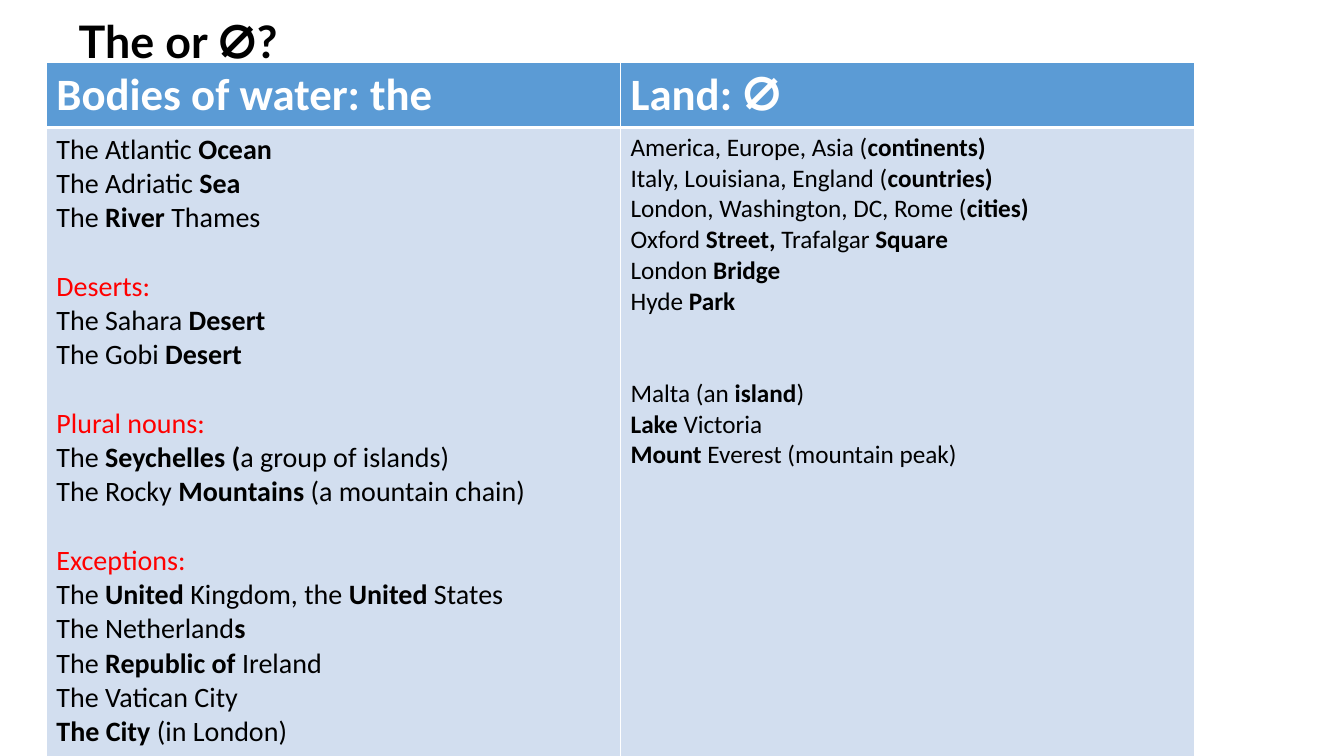
from pptx import Presentation
from pptx.dml.color import RGBColor
from pptx.enum import text as t
from pptx.oxml import parse_xml
from pptx.oxml.ns import nsdecls
from pptx.util import Inches, Pt

BLACK = RGBColor(0, 0, 0)
WHITE = RGBColor(255, 255, 255)
RED = RGBColor(255, 0, 0)
HEADER_BLUE = RGBColor(0x5B, 0x9B, 0xD5)
PALE_BLUE = RGBColor(0xD2, 0xDE, 0xEF)

# Text between asterisks is bold.
TITLE = "The or ⵁ?"
HEADERS = ["Bodies of water: the", "Land: *ⵁ*"]
WATER = [
    ("", ["The Atlantic *Ocean*", "The Adriatic *Sea*", "The *River* Thames"]),
    ("Deserts:", ["The Sahara *Desert*", "The Gobi *Desert*"]),
    ("Plural nouns:", ["The *Seychelles (*a group of islands)",
                       "The Rocky *Mountains* (a mountain chain)"]),
    ("Exceptions:", ["The *United* Kingdom, the *United* States",
                     "The Netherland*s*", "The *Republic of *Ireland",
                     "The Vatican City", "*The City *(in London)"]),
]
LAND = [
    ("", ["America, Europe, Asia (*continents)*",
          "Italy, Louisiana, England (*countries)*",
          "London, Washington, DC, Rome (*cities)*",
          "Oxford *Street, *Trafalgar* Square*",
          "London *Bridge*", "Hyde *Park*"]),
    ("", ["Malta (an* island*)", "*Lake* Victoria",
          "*Mount* Everest (mountain peak)"]),
]
# groups, text size, lines of space between groups
COLUMNS = [(WATER, 20, 1), (LAND, 18, 2)]
LINE_HEIGHT = 1.22
ROW_HEIGHTS = [0.64, 6.43]


def write(para, text, size=20, color=BLACK, bold=False, font="Calibri", marked_font=None):
    for index, part in enumerate(text.split("*")):
        if not part:
            continue
        marked = index % 2 == 1
        span = para.add_run()
        span.text = part
        span.font.size = Pt(size)
        span.font.bold = bold or marked
        span.font.name = marked_font if marked and marked_font else font
        span.font.color.rgb = color


def write_groups(frame, groups, size, gap_lines):
    para = frame.paragraphs[0]
    for number, (heading, lines) in enumerate(groups):
        entries = [(heading, RED)] if heading else []
        entries += [(line, BLACK) for line in lines]
        for position, (line, color) in enumerate(entries):
            if number or position:
                para = frame.add_paragraph()
            if number and position == 0:
                para.space_before = Pt(round(gap_lines * size * LINE_HEIGHT, 1))
            write(para, line, size=size, color=color)


def style_cell(cell, fill, top, bottom):
    """Fill the cell and give it white borders, widths in points."""
    cell.fill.solid()
    cell.fill.fore_color.rgb = fill
    sides = [("lnL", 1), ("lnR", 1), ("lnT", top), ("lnB", bottom)]
    for index, (side, width) in enumerate(sides):
        cell._tc.get_or_add_tcPr().insert(index, parse_xml(
            f'<a:{side} {nsdecls("a")} w="{Pt(width)}"><a:solidFill>'
            f'<a:srgbClr val="{WHITE}"/></a:solidFill></a:{side}>'))


deck = Presentation()
deck.slide_width, deck.slide_height = Inches(13.33), Inches(7.5)
slide = deck.slides.add_slide(deck.slide_layouts[5])

title = slide.shapes.title
title.left, title.top = Inches(0.68), Inches(0.12)
title.width, title.height = Inches(11.5), Inches(0.63)
title.text_frame.auto_size = t.MSO_AUTO_SIZE.NONE
title.text_frame.vertical_anchor = t.MSO_ANCHOR.MIDDLE
heading_para = title.text_frame.paragraphs[0]
heading_para.alignment = t.PP_ALIGN.LEFT
heading_para.line_spacing = 0.9
write(heading_para, TITLE, size=32, bold=True, font="Lato")

table = slide.shapes.add_table(2, 2, Inches(0.46), Inches(0.62),
                               Inches(11.39), Inches(sum(ROW_HEIGHTS))).table
for row, height in zip(table.rows, ROW_HEIGHTS):
    row.height = Inches(height)
for column, (header, content) in enumerate(zip(HEADERS, COLUMNS)):
    header_cell, body_cell = table.cell(0, column), table.cell(1, column)
    style_cell(header_cell, HEADER_BLUE, top=1, bottom=3)
    style_cell(body_cell, PALE_BLUE, top=3, bottom=1)
    write(header_cell.text_frame.paragraphs[0], header, size=32, color=WHITE,
          bold=True, marked_font="Lato")
    write_groups(body_cell.text_frame, *content)

deck.save("out.pptx")
